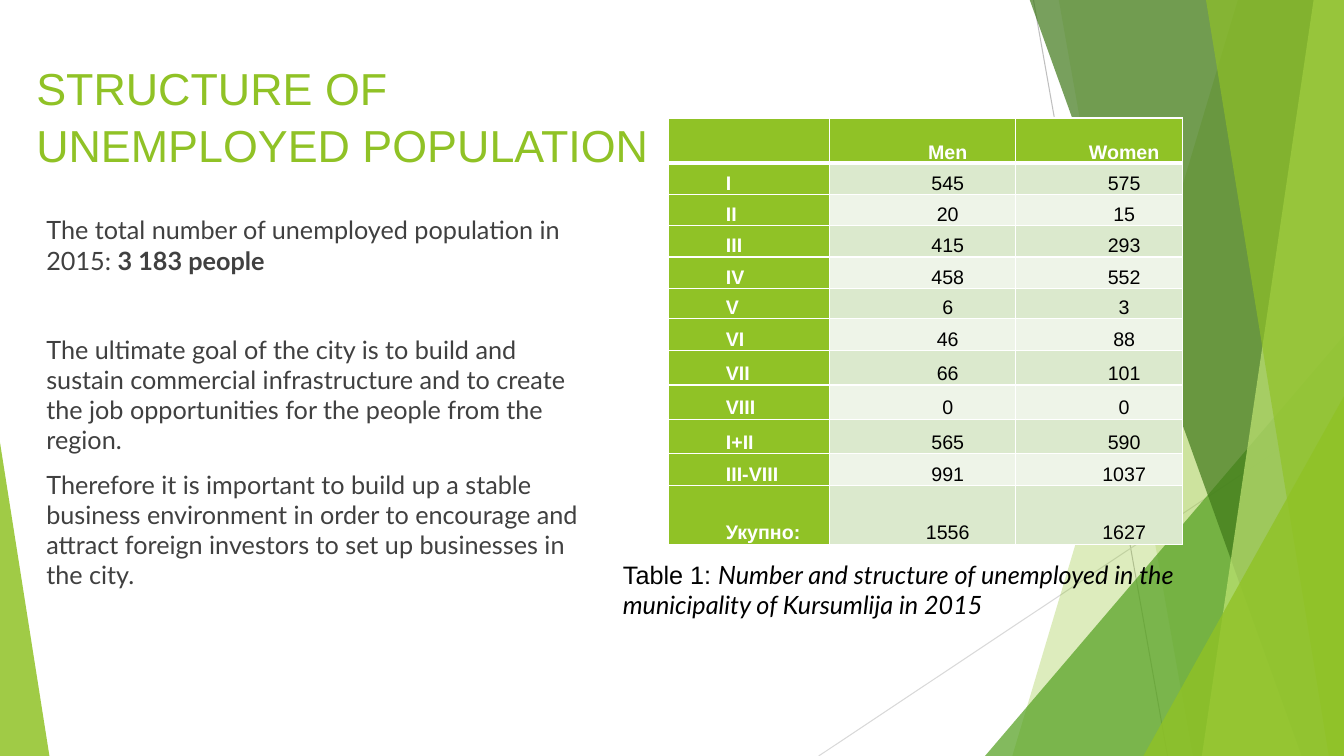
from dataclasses import dataclass

from lxml.etree import SubElement
from pptx import Presentation
from pptx.dml.color import RGBColor
from pptx.enum.shapes import MSO_CONNECTOR as Connector, MSO_SHAPE as Shape
from pptx.enum.text import MSO_ANCHOR as Anchor, MSO_AUTO_SIZE as AutoSize, PP_ALIGN as Align
from pptx.oxml.ns import qn
from pptx.util import Emu, Inches, Pt


@dataclass(frozen=True)
class Theme:
    lime: str = "90C226"
    green: str = "54A021"
    forest: str = "3F7819"
    pale_lime: str = "C0E474"
    band_dark: str = "DBE9CD"
    band_light: str = "EEF4E8"
    gray_text: str = "404040"
    black: str = "000000"
    white: str = "FFFFFF"
    heading_font: str = "Arial"
    body_font: str = "Lato"
    title_size: int = 32
    body_size: int = 18
    table_size: int = 14


@dataclass(frozen=True)
class Ray:
    start: tuple[float, float]
    end: tuple[float, float]
    color: str


@dataclass(frozen=True)
class Facet:
    points: tuple[tuple[float, float], ...]
    color: str
    opacity: int


@dataclass(frozen=True)
class Corner:
    box: tuple[float, float, float, float]
    peak: float
    color: str
    opacity: int


THEME = Theme()
WIDTH, HEIGHT, TOP = 13.33, 7.5, -0.01


def right_facet(top_left: float, bottom_left: float, color: str, opacity: int) -> Facet:
    points = ((top_left, TOP), (WIDTH, TOP), (WIDTH, HEIGHT), (bottom_left, HEIGHT))
    return Facet(points, color, opacity)


DECORATION = (
    Ray((10.25, 0), (11.58, HEIGHT), "BFBFBF"),
    Ray((WIDTH, 4.03), (8.12, HEIGHT), "D9D9D9"),
    right_facet(12.28, 10.04, THEME.lime, 30),
    right_facet(10.5, 11.83, THEME.lime, 20),
    Corner((9.77, 3.33, 3.56, 4.17), 1, THEME.green, 72),
    right_facet(10.21, 12.91, THEME.forest, 70),
    right_facet(13.03, 11.92, THEME.pale_lime, 70),
    right_facet(11.96, 13.18, THEME.lime, 65),
    Corner((11.34, 3.93, 1.99, 3.57), 1, THEME.lime, 80),
    Corner((0, 4.39, 0.49, 3.11), 0, THEME.lime, 85),
)

TABLE_ROWS = (
    ("", "Men", "Women"),
    ("I", "545", "575"),
    ("II", "20", "15"),
    ("III", "415", "293"),
    ("IV", "458", "552"),
    ("V", "6", "3"),
    ("VI", "46", "88"),
    ("VII", "66", "101"),
    ("VIII", "0", "0"),
    ("I+II", "565", "590"),
    ("III-VIII", "991", "1037"),
    ("Укупно:", "1556", "1627"),
)
COLUMN_WIDTHS = (1.6, 1.84, 1.66)
ROW_HEIGHTS = (0.45, *[0.31] * 4, 0.3, 0.32, *[0.34] * 3, 0.32, 0.58)


def inches(values) -> list[Emu]:
    return [Inches(value) for value in values]


def add_text(paragraph, text: str, *, size: int, font: str, color: str,
             bold: bool = False, italic: bool = False) -> None:
    run = paragraph.add_run()
    run.text = text
    run.font.size = Pt(size)
    run.font.name = font
    run.font.bold = bold
    run.font.italic = italic
    run.font.color.rgb = RGBColor.from_string(color)


def paint(shape, color: str, opacity: int) -> None:
    shape.shadow.inherit = False
    shape.line.fill.background()
    shape.fill.solid()
    shape.fill.fore_color.rgb = RGBColor.from_string(color)
    color_node = shape.element.spPr.find(qn("a:solidFill"))[0]
    SubElement(color_node, qn("a:alpha"), val=str(opacity * 1000))


def draw_ray(slide, ray: Ray) -> None:
    connector = slide.shapes.add_connector(Connector.STRAIGHT, *inches(ray.start + ray.end))
    connector.line.color.rgb = RGBColor.from_string(ray.color)
    connector.line.width = Pt(0.75)
    SubElement(connector.element.spPr, qn("a:effectLst"))


def draw_facet(slide, facet: Facet) -> None:
    start, *others = [tuple(inches(point)) for point in facet.points]
    builder = slide.shapes.build_freeform(*start)
    builder.add_line_segments(others, close=True)
    paint(builder.convert_to_shape(), facet.color, facet.opacity)


def draw_corner(slide, corner: Corner) -> None:
    shape = slide.shapes.add_shape(Shape.ISOSCELES_TRIANGLE, *inches(corner.box))
    shape.adjustments[0] = corner.peak
    paint(shape, corner.color, corner.opacity)


def place(shape, box: tuple[float, float, float, float], anchor: Anchor):
    shape.left, shape.top, shape.width, shape.height = inches(box)
    frame = shape.text_frame
    frame.word_wrap = True
    frame.auto_size = AutoSize.NONE
    frame.vertical_anchor = anchor
    shape.element.getparent().append(shape.element)
    return frame


def fill_title(slide) -> None:
    frame = place(slide.shapes.title, (0.26, 0.34, 6.66, 1.41), Anchor.BOTTOM)
    paragraph = frame.paragraphs[0]
    paragraph.alignment = Align.LEFT
    paragraph.line_spacing = 1.05
    add_text(paragraph, "STRUCTURE OF UNEMPLOYED POPULATION", size=THEME.title_size,
             font=THEME.heading_font, color=THEME.lime)


def fill_body(slide) -> None:
    frame = place(slide.placeholders[1], (0.36, 2.08, 5.61, 3.78), Anchor.TOP)
    paragraphs = (
        (10, (("The total number of unemployed population in 2015: ", False),
              ("3 183 people", True))),
        (42, (("The ultimate goal of the city is to build and sustain commercial infrastructure "
               "and to create the job opportunities for the people from the region.", False),)),
        (10, (("Therefore it is important to build up a stable business environment in order to "
               "encourage and attract foreign investors to set up businesses in the city.", False),)),
    )
    for index, (space, runs) in enumerate(paragraphs):
        paragraph = frame.add_paragraph() if index else frame.paragraphs[0]
        paragraph.space_before = Pt(space)
        properties = paragraph._p.get_or_add_pPr()
        properties.set("marL", "0")
        properties.set("indent", "0")
        SubElement(properties, qn("a:buNone"))
        for text, bold in runs:
            add_text(paragraph, text, size=THEME.body_size, font=THEME.body_font,
                     color=THEME.gray_text, bold=bold)


def format_cell(cell, text: str, row: int, column: int) -> None:
    is_label = row == 0 or column == 0
    cell.margin_left = cell.margin_right = Inches(0.07)
    cell.margin_top = cell.margin_bottom = 0
    cell.vertical_anchor = Anchor.BOTTOM
    properties = cell._tc.get_or_add_tcPr()
    widths = {"L": 1, "R": 1, "T": 3 if row == 1 else 1, "B": 3 if row == 0 else 1}
    for side, width in widths.items():
        border = SubElement(properties, qn(f"a:ln{side}"), w=str(Pt(width)))
        SubElement(SubElement(border, qn("a:solidFill")), qn("a:srgbClr"), val=THEME.white)
    band = THEME.band_dark if row % 2 else THEME.band_light
    cell.fill.solid()
    cell.fill.fore_color.rgb = RGBColor.from_string(THEME.lime if is_label else band)
    if text:
        paragraph = cell.text_frame.paragraphs[0]
        paragraph.alignment = Align.CENTER if column else Align.LEFT
        paragraph.line_spacing = 1.15
        paragraph._p.get_or_add_pPr().set("indent", str(Inches(0.5)))
        add_text(paragraph, text, size=THEME.table_size, font=THEME.heading_font,
                 color=THEME.white if is_label else THEME.black, bold=is_label)


def add_unemployment_table(slide) -> None:
    table = slide.shapes.add_table(len(TABLE_ROWS), len(COLUMN_WIDTHS),
                                   *inches((6.63, 1.17, 5.09, 4.22))).table
    table.horz_banding = False
    for column, width in zip(table.columns, COLUMN_WIDTHS):
        column.width = Inches(width)
    for row_index, (texts, height) in enumerate(zip(TABLE_ROWS, ROW_HEIGHTS)):
        table.rows[row_index].height = Inches(height)
        for column_index, text in enumerate(texts):
            format_cell(table.cell(row_index, column_index), text, row_index, column_index)


def add_caption(slide) -> None:
    box = (6.08, 5.5, 5.78, 0.71)
    frame = place(slide.shapes.add_textbox(*inches(box)), box, Anchor.TOP)
    paragraph = frame.paragraphs[0]
    add_text(paragraph, "Table 1: ", size=THEME.body_size, font=THEME.heading_font, color=THEME.black)
    add_text(paragraph, "Number and structure of unemployed in the municipality of Kursumlija in 2015",
             size=THEME.body_size, font=THEME.body_font, color=THEME.black, italic=True)


def main() -> None:
    presentation = Presentation()
    presentation.slide_width, presentation.slide_height = inches((WIDTH, HEIGHT))
    slide = presentation.slides.add_slide(presentation.slide_layouts[1])
    painters = {Ray: draw_ray, Facet: draw_facet, Corner: draw_corner}
    for element in DECORATION:
        painters[type(element)](slide, element)
    fill_title(slide)
    fill_body(slide)
    add_unemployment_table(slide)
    add_caption(slide)
    presentation.save("out.pptx")


if __name__ == "__main__":
    main()
